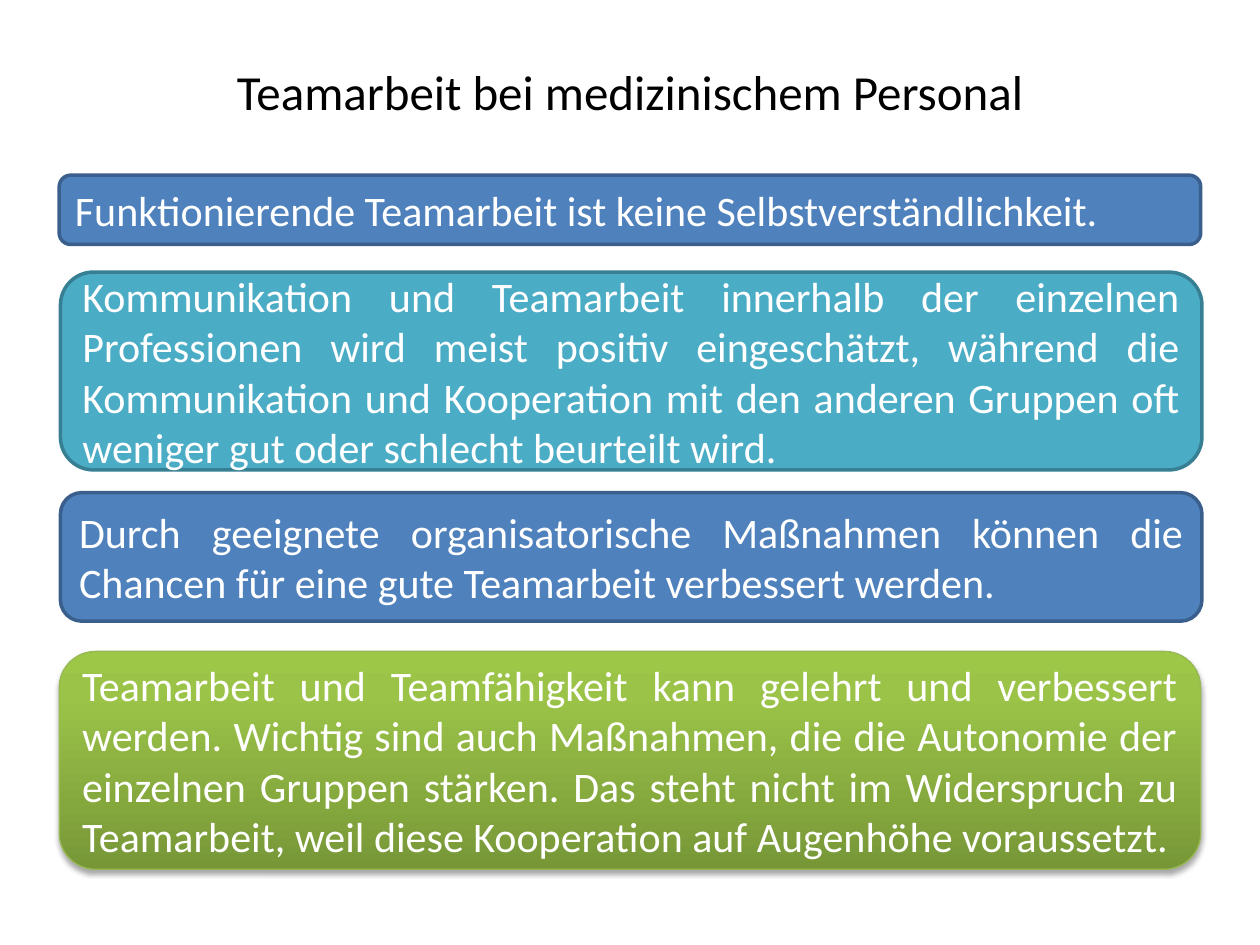
from copy import deepcopy

from lxml import etree
from pptx import Presentation
from pptx.dml.color import RGBColor
from pptx.enum import shapes, text
from pptx.oxml import ns
from pptx.util import Inches, Pt

HUES = {
    "ink": "000000",
    "paper": "FFFFFF",
    "blue": "4F81BD",
    "navy": "3A5F8C",
    "teal": "4BACC6",
    "sea": "377F92",
    "moss": "779737",
    "leaf": "9BC348",
    "lime": "9DC746",
    "rim": "98B955",
}
LEFT, WIDE = 0.47, 9.06
CARDS = [
    ((LEFT, 1.39, WIDE, 0.55), "blue", "navy",
     "Funktionierende Teamarbeit ist keine Selbstverständlichkeit."),
    ((LEFT + 0.01, 2.16, WIDE, 1.57), "teal", "sea",
     "Kommunikation und Teamarbeit innerhalb der einzelnen Professionen wird "
     "meist positiv eingeschätzt, während die Kommunikation und Kooperation "
     "mit den anderen Gruppen oft weniger gut oder schlecht beurteilt wird."),
    ((LEFT + 0.01, 3.91, WIDE, 1.02), "blue", "navy",
     "Durch geeignete organisatorische Maßnahmen können die Chancen für eine "
     "gute Teamarbeit verbessert werden."),
]
GOAL = (
    "Teamarbeit und Teamfähigkeit kann gelehrt und verbessert werden. Wichtig "
    "sind auch Maßnahmen, die die Autonomie der einzelnen Gruppen stärken. Das "
    "steht nicht im Widerspruch zu Teamarbeit, weil diese Kooperation auf "
    "Augenhöhe voraussetzt."
)


def tint(name):
    return RGBColor.from_string(HUES[name])


def write(shape, words, size=24, hue="paper", align=text.PP_ALIGN.JUSTIFY):
    frame = shape.text_frame
    frame.word_wrap = True
    frame.vertical_anchor = text.MSO_ANCHOR.MIDDLE
    para = frame.paragraphs[0]
    para.alignment = align
    run = para.add_run()
    run.text = words
    run.font.name = "Calibri"
    run.font.size = Pt(size)
    run.font.color.rgb = tint(hue)


def add_title(slide, box):
    shape = slide.shapes.add_textbox(*map(Inches, box))
    write(shape, "Teamarbeit bei medizinischem Personal", size=28, hue="ink",
          align=text.PP_ALIGN.CENTER)


def add_card(slide, box, fill, line, words, width=2):
    kind = shapes.MSO_SHAPE.ROUNDED_RECTANGLE
    card = slide.shapes.add_shape(kind, *map(Inches, box))
    card.shadow.inherit = False
    card.fill.solid()
    card.fill.fore_color.rgb = tint(fill)
    card.line.color.rgb = tint(line)
    card.line.width = Pt(width)
    write(card, words)
    return card


def blend(card, stops):
    card.fill.gradient()
    card.fill.gradient_angle = 90
    rail = card._element.spPr.find(".//" + ns.qn("a:gsLst"))
    while len(rail) < len(stops):
        rail.append(deepcopy(rail[0]))
    for stop, (place, hue) in zip(card.fill.gradient_stops, stops):
        stop.position = place
        stop.color.rgb = tint(hue)


def cast(card, blur, dist, alpha):
    effect = card._element.spPr.find(ns.qn("a:effectLst"))
    shade = etree.SubElement(
        effect, ns.qn("a:outerShdw"), blurRad=str(int(Pt(blur))),
        dist=str(int(Pt(dist))), dir="5400000", rotWithShape="0")
    hue = etree.SubElement(shade, ns.qn("a:srgbClr"), val=HUES["ink"])
    etree.SubElement(hue, ns.qn("a:alpha"), val=str(alpha * 1000))


def add_goal(slide, box):
    card = add_card(slide, box, "leaf", "rim", GOAL, width=0.75)
    blend(card, [(0, "moss"), (0.8, "leaf"), (1, "lime")])
    cast(card, blur=3.1, dist=1.8, alpha=35)


def main():
    deck = Presentation()
    deck.slide_width, deck.slide_height = Inches(10), Inches(7.5)
    slide = deck.slides.add_slide(deck.slide_layouts[6])
    add_title(slide, (0.5, 0.3, 9, 0.85))
    for card in CARDS:
        add_card(slide, *card)
    add_goal(slide, (LEFT, 5.17, WIDE, 1.73))
    deck.save("out.pptx")


if __name__ == "__main__":
    main()
